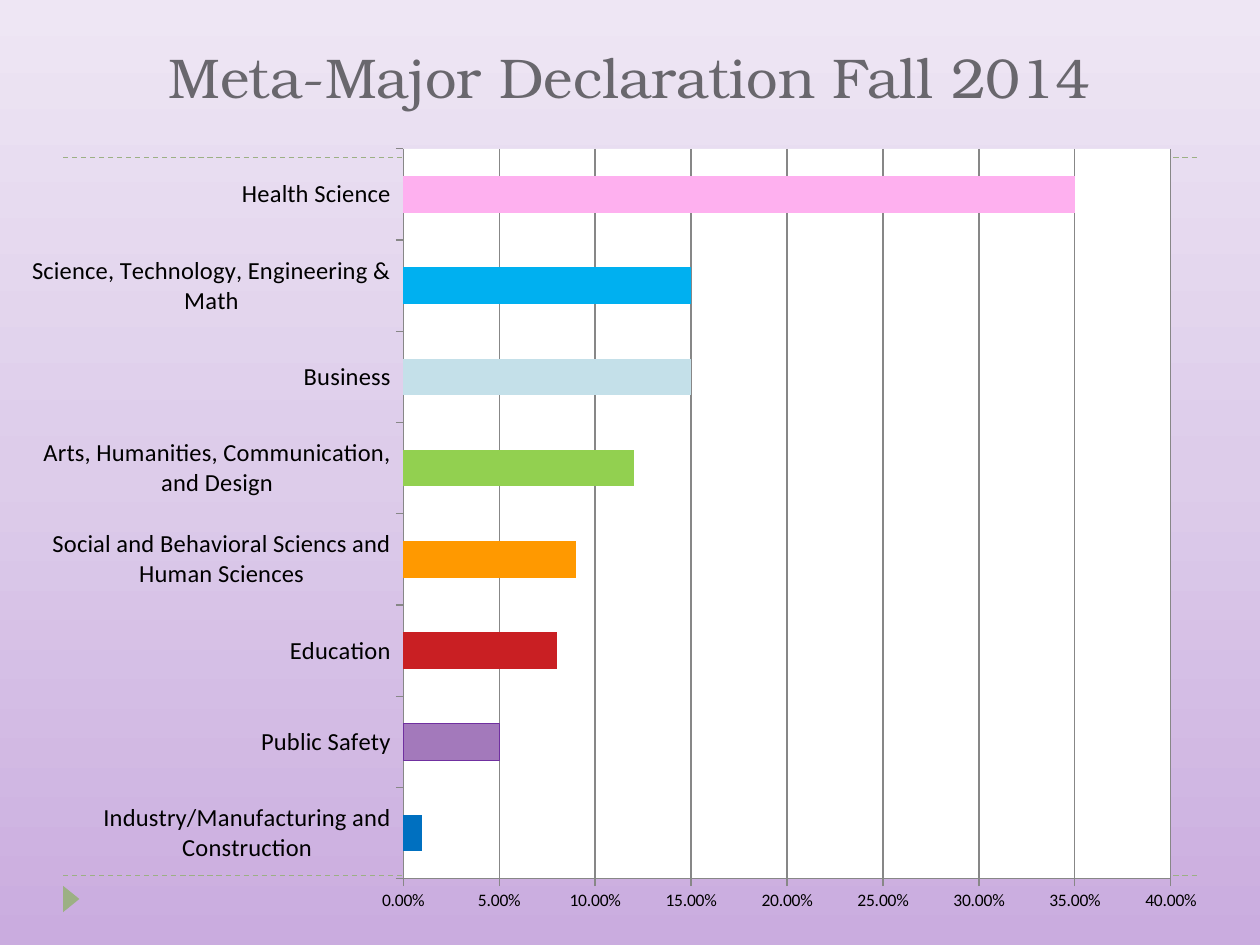
from copy import deepcopy

from lxml import etree
from pptx import Presentation
from pptx.chart.data import CategoryChartData
from pptx.dml.color import RGBColor
from pptx.enum.chart import XL_CHART_TYPE, XL_TICK_MARK
from pptx.enum.dml import MSO_LINE
from pptx.enum.shapes import MSO_CONNECTOR, MSO_SHAPE
from pptx.enum.text import MSO_ANCHOR, PP_ALIGN
from pptx.oxml import parse_xml
from pptx.oxml.ns import nsdecls, qn
from pptx.util import Inches, Pt

rgb = RGBColor.from_string
BLACK = RGBColor(0, 0, 0)
TITLE_GREY = rgb("69676D")
GREEN = rgb("9CB084")
PURPLE = rgb("A379BB")
DARK_PURPLE = rgb("7030A0")
BACKGROUND = [(0, rgb("CAACDF")), (0.5, rgb("DDCCEA")), (1, rgb("EEE6F4"))]

# Category, share of declarations, bar colour; from the bottom bar up
MAJORS = [
    ("Industry/Manufacturing and Construction", 0.01, rgb("0070C0")),
    ("Public Safety", 0.05, PURPLE),
    ("Education", 0.08, rgb("C91F23")),
    ("Social and Behavioral Sciencs and Human Sciences", 0.09, rgb("FF9900")),
    ("Arts, Humanities, Communication, and Design", 0.12, rgb("92D050")),
    ("Business", 0.15, rgb("C4E0E9")),
    ("Science, Technology, Engineering & Math", 0.15, rgb("00B0F0")),
    ("Health Science", 0.35, rgb("FEB0EF")),
]
PLOT = {"x": 0.308, "y": 0.029, "w": 0.636, "h": 0.927}


def inches(*lengths):
    return [Inches(n) for n in lengths]


def set_background(s):
    fill = s.background.fill
    fill.gradient()
    fill.gradient_angle = 90
    stop_list = s.element.find(".//" + qn("a:gsLst"))
    stop_list.insert(1, deepcopy(stop_list[0]))
    for stop, (position, color) in zip(fill.gradient_stops, BACKGROUND):
        stop.position = position
        stop.color.rgb = color


def add_frame(s, left, top, right, bottom):
    """Dashed rules above and below the content, with a marker at the foot."""
    for y in (top, bottom):
        rule = s.shapes.add_connector(MSO_CONNECTOR.STRAIGHT,
                                      *inches(left, y, right, y))
        rule.line.color.rgb = GREEN
        rule.line.width = Pt(0.75)
        rule.line.dash_style = MSO_LINE.DASH
        etree.SubElement(rule.element.spPr, qn("a:effectLst"))
    marker = s.shapes.add_shape(MSO_SHAPE.ISOSCELES_TRIANGLE,
                                *inches(left - 0.04, bottom + 0.12, 0.21, 0.13))
    marker.rotation = 90
    marker.shadow.inherit = False
    marker.fill.solid()
    marker.fill.fore_color.rgb = GREEN
    marker.line.fill.background()


def set_title(s, text, *box):
    title = s.shapes.title
    title.left, title.top, title.width, title.height = inches(*box)
    tf = title.text_frame
    tf.text = text
    tf.vertical_anchor = MSO_ANCHOR.BOTTOM
    p = tf.paragraphs[0]
    p.alignment = PP_ALIGN.CENTER
    p.font.name = "TeX Gyre Bonum"
    p.font.size = Pt(32)
    p.font.color.rgb = TITLE_GREY


def format_plot_area(chart):
    """Fix the inner plot box and give it a white fill."""
    plot_area = chart.element.find(".//" + qn("c:plotArea"))
    for old in plot_area.findall(qn("c:layout")):
        plot_area.remove(old)
    modes = "".join(f'<c:{k}Mode val="edge"/>' for k in "xy")
    sizes = "".join(f'<c:{k} val="{v}"/>' for k, v in PLOT.items())
    plot_area.insert(0, parse_xml(
        f'<c:layout {nsdecls("c")}><c:manualLayout>'
        f'<c:layoutTarget val="inner"/>{modes}{sizes}'
        '</c:manualLayout></c:layout>'))
    plot_area.append(parse_xml(
        f'<c:spPr {nsdecls("c", "a")}><a:solidFill>'
        '<a:srgbClr val="FFFFFF"/></a:solidFill></c:spPr>'))


def add_majors_chart(s, *box):
    names, shares, colors = zip(*MAJORS)
    data = CategoryChartData(number_format="0.00%")
    data.categories = names
    data.add_series("Series 1", shares)
    chart = s.shapes.add_chart(XL_CHART_TYPE.BAR_CLUSTERED, *inches(*box), data).chart
    chart.has_legend = False
    chart.has_title = False
    chart.font.name = "Calibri"
    chart.font.size = Pt(10)
    chart.font.color.rgb = BLACK

    plot = chart.plots[0]
    plot.gap_width = 150
    plot.vary_by_categories = False
    series = plot.series[0]
    series.format.fill.solid()
    series.format.fill.fore_color.rgb = PURPLE
    for i, color in enumerate(colors):
        bar = series.points[i].format
        bar.fill.solid()
        bar.fill.fore_color.rgb = color
        if color == PURPLE:
            bar.line.color.rgb = DARK_PURPLE
            bar.line.width = Pt(0.5)

    values, categories = chart.value_axis, chart.category_axis
    for axis in (values, categories):
        axis.major_tick_mark = XL_TICK_MARK.OUTSIDE
        axis.minor_tick_mark = XL_TICK_MARK.NONE
    categories.tick_labels.font.size = Pt(14)
    values.minimum_scale, values.maximum_scale = 0, 0.4
    values.major_unit = 0.05
    values.has_major_gridlines = True
    values.tick_labels.number_format = "0.00%"
    values.tick_labels.number_format_is_linked = False
    format_plot_area(chart)


def main():
    prs = Presentation()
    prs.slide_width, prs.slide_height = inches(10, 7.5)
    s = prs.slides.add_slide(prs.slide_layouts.get_by_name("Title Only"))
    set_background(s)
    add_frame(s, 0.5, 1.25, 9.5, 6.95)
    set_title(s, "Meta-Major Declaration Fall 2014", 0.5, 0.17, 9, 0.75)
    add_majors_chart(s, 0.25, 1, 9.58, 6.25)
    prs.save("out.pptx")


if __name__ == "__main__":
    main()
